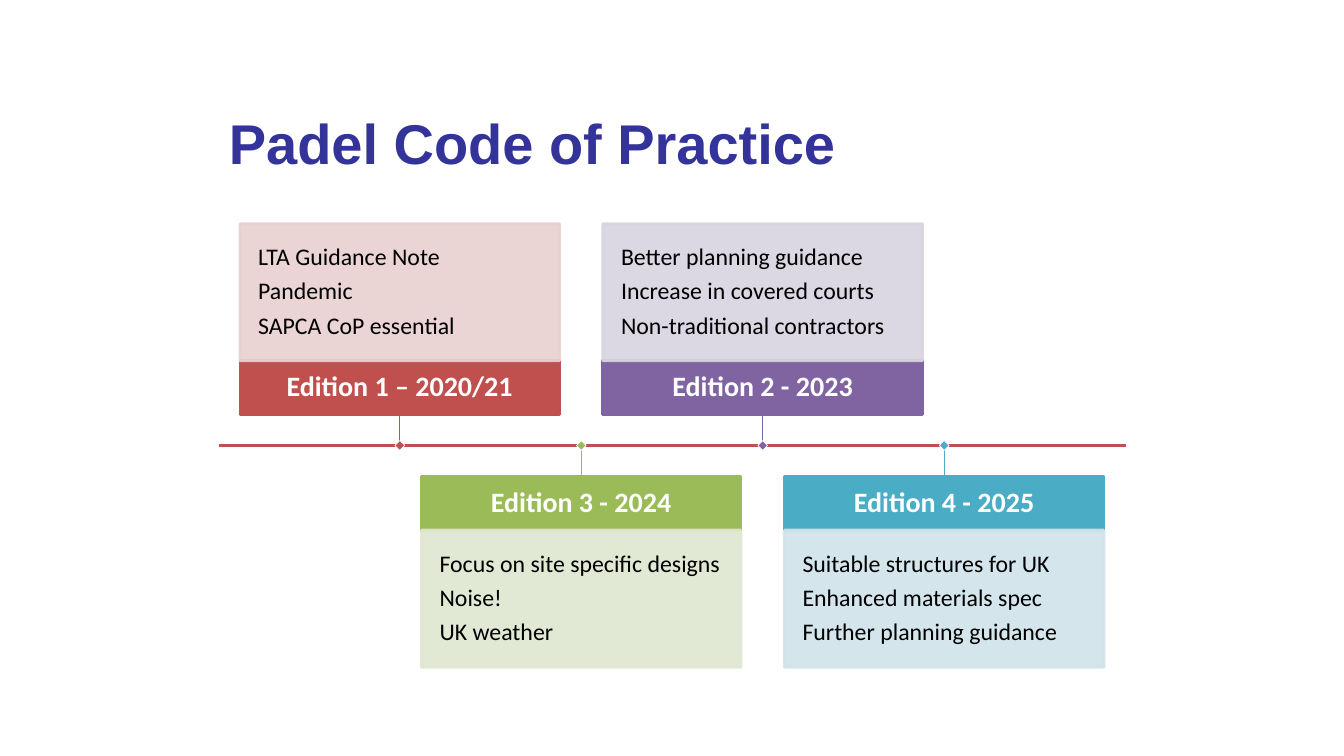
import pptx
import pptx.dml.color
import pptx.enum.shapes
import pptx.enum.text
import pptx.oxml
import pptx.oxml.ns
import pptx.util
from pptx.util import Inches

COLOURS = {
    "title": "333399", "white": "FFFFFF", "black": "000000",
    "red": "C0504D", "pale red": "E8D0D0",
    "green": "9BBB59", "pale green": "DEE7D1",
    "purple": "8064A2", "pale purple": "D8D3E0",
    "blue": "4BACC6", "pale blue": "D0E3EA",
}

# Left to right along the timeline: heading, colour, points
EDITIONS = [
    ("Edition 1 – 2020/21", "red",
     ["LTA Guidance Note", "Pandemic", "SAPCA CoP essential"]),
    ("Edition 3 - 2024", "green",
     ["Focus on site specific designs", "Noise!", "UK weather"]),
    ("Edition 2 - 2023", "purple",
     ["Better planning guidance", "Increase in covered courts",
      "Non-traditional contractors"]),
    ("Edition 4 - 2025", "blue",
     ["Suitable structures for UK", "Enhanced materials spec",
      "Further planning guidance"]),
]

TIMELINE_LEFT, TIMELINE_RIGHT, TIMELINE_Y = 2.17, 11.17, 4.42
FIRST_LEFT, STEP = 2.38, 1.8
CARD_WIDTH, HEADER_HEIGHT, BODY_HEIGHT = 3.17, 0.53, 1.36
STEM = 0.31
MARKER = 0.07


def rgb(name):
    return pptx.dml.color.RGBColor.from_string(COLOURS[name])


def write_text(shape, lines, size, colour, font="Calibri", bold=False,
               align=pptx.enum.text.PP_ALIGN.LEFT, inset=0.1,
               line_spacing=None, space_after=None):
    frame = shape.text_frame
    frame.word_wrap = True
    frame.vertical_anchor = pptx.enum.text.MSO_ANCHOR.MIDDLE
    frame.margin_left = frame.margin_right = Inches(inset)
    frame.margin_top = frame.margin_bottom = Inches(min(inset, 0.18))
    frame.text = "\n".join(lines)
    for paragraph in frame.paragraphs:
        paragraph.alignment = align
        paragraph.line_spacing = line_spacing
        if space_after is not None:
            paragraph.space_after = pptx.util.Pt(space_after)
        paragraph.font.name = font
        paragraph.font.size = pptx.util.Pt(size)
        paragraph.font.bold = bold
        paragraph.font.color.rgb = rgb(colour)


def set_opacity(shape, percent):
    """Apply one opacity to the fill and the outline of a shape."""
    for colour in shape._element.spPr.iter(pptx.oxml.ns.qn("a:srgbClr")):
        alpha = pptx.oxml.parse_xml(
            f'<a:alpha {pptx.oxml.ns.nsdecls("a")} val="{percent * 1000}"/>')
        colour.append(alpha)


def add_rectangle(slide, left, top, width, height, fill, line, line_width=2):
    shape = slide.shapes.add_shape(
        pptx.enum.shapes.MSO_SHAPE.RECTANGLE,
        Inches(left), Inches(top), Inches(width), Inches(height))
    shape.shadow.inherit = False
    shape.fill.solid()
    shape.fill.fore_color.rgb = rgb(fill)
    shape.line.color.rgb = rgb(line)
    shape.line.width = pptx.util.Pt(line_width)
    return shape


def add_line(slide, start, end, colour, width):
    line = slide.shapes.add_connector(
        pptx.enum.shapes.MSO_CONNECTOR.STRAIGHT,
        *(Inches(value) for value in (*start, *end)))
    line.line.color.rgb = rgb(colour)
    line.line.width = pptx.util.Pt(width)
    line._element.spPr.append(pptx.oxml.parse_xml(
        f'<a:effectLst {pptx.oxml.ns.nsdecls("a")}/>'))
    return line


def add_title(slide, text):
    title = slide.shapes.title
    title.left, title.top = Inches(2.17), Inches(0.78)
    title.width, title.height = Inches(9), Inches(1.25)
    write_text(title, [text], 40, "title", font="Arial", bold=True)


def add_edition(slide, left, above, heading, colour, points):
    """Add a card above or below the timeline, with its stem and marker."""
    if above:
        header_top = TIMELINE_Y - STEM - HEADER_HEIGHT
        body_top = header_top - BODY_HEIGHT
        stem_start, side = header_top + HEADER_HEIGHT, 2
    else:
        header_top = TIMELINE_Y + STEM
        body_top = header_top + HEADER_HEIGHT
        stem_start, side = header_top, 0
    centre = left + CARD_WIDTH / 2

    header = add_rectangle(slide, left, header_top, CARD_WIDTH, HEADER_HEIGHT,
                           colour, colour)
    write_text(header, [heading], 20, "white", bold=True, inset=0.11,
               align=pptx.enum.text.PP_ALIGN.CENTER,
               line_spacing=0.9, space_after=7)

    pale = f"pale {colour}"
    body = add_rectangle(slide, left, body_top, CARD_WIDTH, BODY_HEIGHT,
                         pale, pale)
    set_opacity(body, 90)
    write_text(body, points, 17, "black", inset=0.18,
               line_spacing=0.9, space_after=6)

    stem = add_line(slide, (centre, stem_start), (centre, TIMELINE_Y),
                    colour, 0.75)
    stem.begin_connect(header, side)

    marker = add_rectangle(slide, centre - MARKER / 2, TIMELINE_Y - MARKER / 2,
                           MARKER, MARKER, colour, "white", 0.5)
    marker.rotation = 45


def main():
    presentation = pptx.Presentation()
    presentation.slide_width = Inches(13.33)
    presentation.slide_height = Inches(7.5)
    slide = presentation.slides.add_slide(presentation.slide_layouts[5])

    add_title(slide, "Padel Code of Practice")
    add_line(slide, (TIMELINE_LEFT, TIMELINE_Y), (TIMELINE_RIGHT, TIMELINE_Y),
             "red", 2)
    for index, (heading, colour, points) in enumerate(EDITIONS):
        add_edition(slide, FIRST_LEFT + index * STEP, index % 2 == 0,
                    heading, colour, points)

    presentation.save("out.pptx")


if __name__ == "__main__":
    main()
